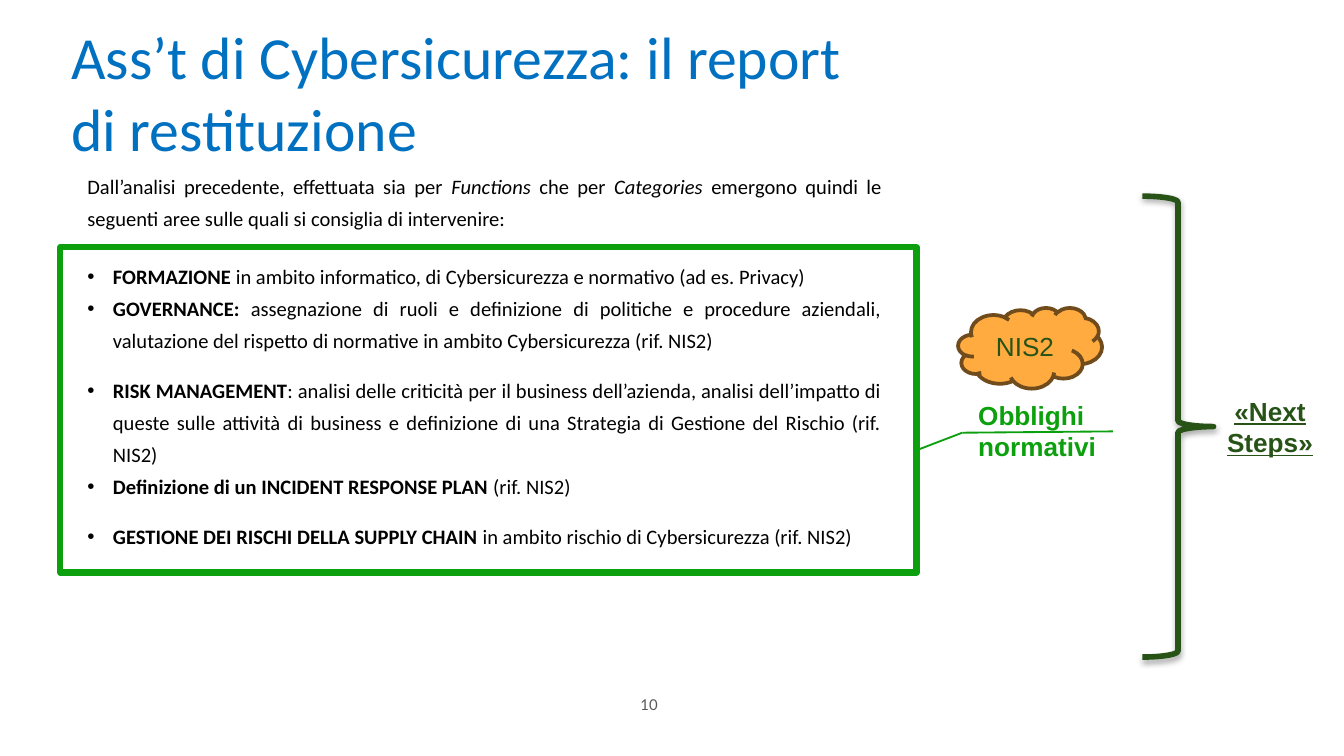
from lxml import etree
from pptx import Presentation
from pptx.dml.color import RGBColor
from pptx.enum import shapes, text
from pptx.oxml import ns
from pptx.util import Inches, Pt

GREEN, DARK_GREEN, BLACK = "0CA00E", "275317", "000000"

INTRO = [
    ("Dall’analisi precedente, effettuata sia per ", ""),
    ("Functions", "i"),
    (" che per ", ""),
    ("Categories ", "i"),
    ("emergono quindi le seguenti aree sulle quali si consiglia di intervenire:", ""),
]
AREAS = [
    (14, "FORMAZIONE ",
     "in ambito informatico, di Cybersicurezza e normativo (ad es. Privacy)"),
    (0, "GOVERNANCE: ",
     "assegnazione di ruoli e definizione di politiche e procedure aziendali, "
     "valutazione del rispetto di normative in ambito Cybersicurezza (rif. NIS2)"),
    (9.5, "RISK MANAGEMENT",
     ": analisi delle criticità per il business dell’azienda, analisi dell’impatto "
     "di queste sulle attività di business e definizione di una Strategia di "
     "Gestione del Rischio (rif. NIS2)"),
    (0, "Definizione di un INCIDENT RESPONSE PLAN ", "(rif. NIS2)"),
    (9.5, "GESTIONE DEI RISCHI DELLA SUPPLY CHAIN ",
     "in ambito rischio di Cybersicurezza (rif. NIS2)"),
]


def rgb(value):
    return RGBColor.from_string(value)


def sub(parent, tag, **attrs):
    return etree.SubElement(parent, ns.qn(tag), attrs)


def style(p, size, name, color, bold=None, underline=None):
    p.font.size, p.font.name = Pt(size), name
    p.font.color.rgb = rgb(color)
    p.font.bold, p.font.underline = bold, underline


def add_runs(p, runs):
    for words, look in runs:
        r = p.add_run()
        r.text = words
        if "b" in look:
            r.font.bold = True
        if "i" in look:
            r.font.italic = True


def set_margins(tf, margin):
    tf.margin_left = tf.margin_right = Inches(margin)
    tf.margin_top = tf.margin_bottom = Inches(margin)


def add_text(s, x, y, w, h, lines=(), size=14, name="Arial", color=BLACK,
             align=None, **look):
    tf = s.shapes.add_textbox(Inches(x), Inches(y), Inches(w), Inches(h)).text_frame
    tf.word_wrap = True
    for i, line in enumerate(lines):
        p = tf.add_paragraph() if i else tf.paragraphs[0]
        p.text = line
        p.alignment = align
        style(p, size, name, color, **look)
    return tf


def add_shape(s, kind, x, y, w, h, line, width, fill=None):
    sp = s.shapes.add_shape(kind, Inches(x), Inches(y), Inches(w), Inches(h))
    sp.shadow.inherit = False
    if fill:
        sp.fill.solid()
        sp.fill.fore_color.rgb = rgb(fill)
    else:
        sp.fill.background()
    sp.line.color.rgb = rgb(line)
    sp.line.width = Pt(width)
    return sp


def add_line(s, x1, y1, x2, y2):
    line = s.shapes.add_connector(shapes.MSO_CONNECTOR.STRAIGHT, Inches(x1),
                                  Inches(y1), Inches(x2), Inches(y2))
    line.line.color.rgb = rgb(GREEN)
    line.line.width = Pt(1)
    sub(line._element.spPr, "a:effectLst")


def add_shadow(sp):
    effects = sp._element.spPr.find(ns.qn("a:effectLst"))
    shadow = sub(effects, "a:outerShdw", blurRad=str(Pt(3.1)), dist=str(Pt(1.8)),
                 dir="5400000", rotWithShape="0")
    sub(sub(shadow, "a:srgbClr", val=BLACK), "a:alpha", val="35000")


def add_bullet(p):
    pPr = p._p.get_or_add_pPr()
    pPr.set("marL", str(Inches(0.19)))
    pPr.set("indent", str(-Inches(0.19)))
    sub(sub(pPr, "a:buClr"), "a:srgbClr", val=BLACK)
    sub(pPr, "a:buFont", typeface="Arial")
    sub(pPr, "a:buChar", char="•")


def format_body(p):
    p.alignment = text.PP_ALIGN.JUSTIFY
    p.line_spacing = 1.3
    style(p, 11, "Calibri", BLACK)


def set_title(s):
    title = s.shapes.title
    title.left, title.top = Inches(0.53), Inches(0.15)
    title.width, title.height = Inches(6.05), Inches(1.08)
    tf = title.text_frame
    tf.text = "Ass’t di Cybersicurezza: il report di restituzione"
    tf.auto_size = text.MSO_AUTO_SIZE.NONE
    tf.vertical_anchor = text.MSO_ANCHOR.TOP
    set_margins(tf, 0)
    p = tf.paragraphs[0]
    p.alignment = text.PP_ALIGN.LEFT
    style(p, 32, "Calibri", "0070C0")


def add_body(s):
    tf = add_text(s, 0.65, 1.24, 5.91, 3.03)
    set_margins(tf, 0)
    add_runs(tf.paragraphs[0], INTRO)
    format_body(tf.paragraphs[0])
    for gap, heading, detail in AREAS:
        p = tf.add_paragraph()
        add_bullet(p)
        p.space_before = Pt(gap)
        add_runs(p, [(heading, "b"), (detail, "")])
        format_body(p)


def main():
    prs = Presentation()
    prs.slide_width = Inches(10)
    prs.slide_height = prs.slide_width * 9 // 16
    s = prs.slides.add_slide(prs.slide_layouts[5])
    center = text.PP_ALIGN.CENTER
    kinds = shapes.MSO_SHAPE

    set_title(s)
    add_body(s)
    number = add_text(s, 4.53, 5.03, 0.6, 0.43, ["10"], 8, "Lato", "595959", center)
    number.vertical_anchor = text.MSO_ANCHOR.MIDDLE
    set_margins(number, 0.1)

    add_shape(s, kinds.RECTANGLE, 0.45, 1.84, 6.37, 2.42, GREEN, 3.25)
    add_line(s, 6.82, 3.35, 7.16, 3.22)
    add_text(s, 7.18, 2.92, 1.33, 0.57, ["Obblighi", "normativi"],
             color=GREEN, bold=True)
    add_line(s, 7.16, 3.22, 8.28, 3.21)

    brace = add_shape(s, kinds.RIGHT_BRACE, 8.5, 1.46, 0.53, 3.43, DARK_GREEN, 3)
    add_shadow(brace)
    add_text(s, 9.03, 2.89, 0.84, 0.57, ["«Next\vSteps»"], color=DARK_GREEN,
             align=center, bold=True, underline=True)

    cloud = add_shape(s, kinds.CLOUD, 7.13, 2.29, 1.07, 0.6, "704B1C", 2, "FFAB40")
    p = cloud.text_frame.paragraphs[0]
    p.text = "NIS2"
    p.alignment = center
    style(p, 14, "Arial", DARK_GREEN)

    prs.save("out.pptx")


if __name__ == "__main__":
    main()
